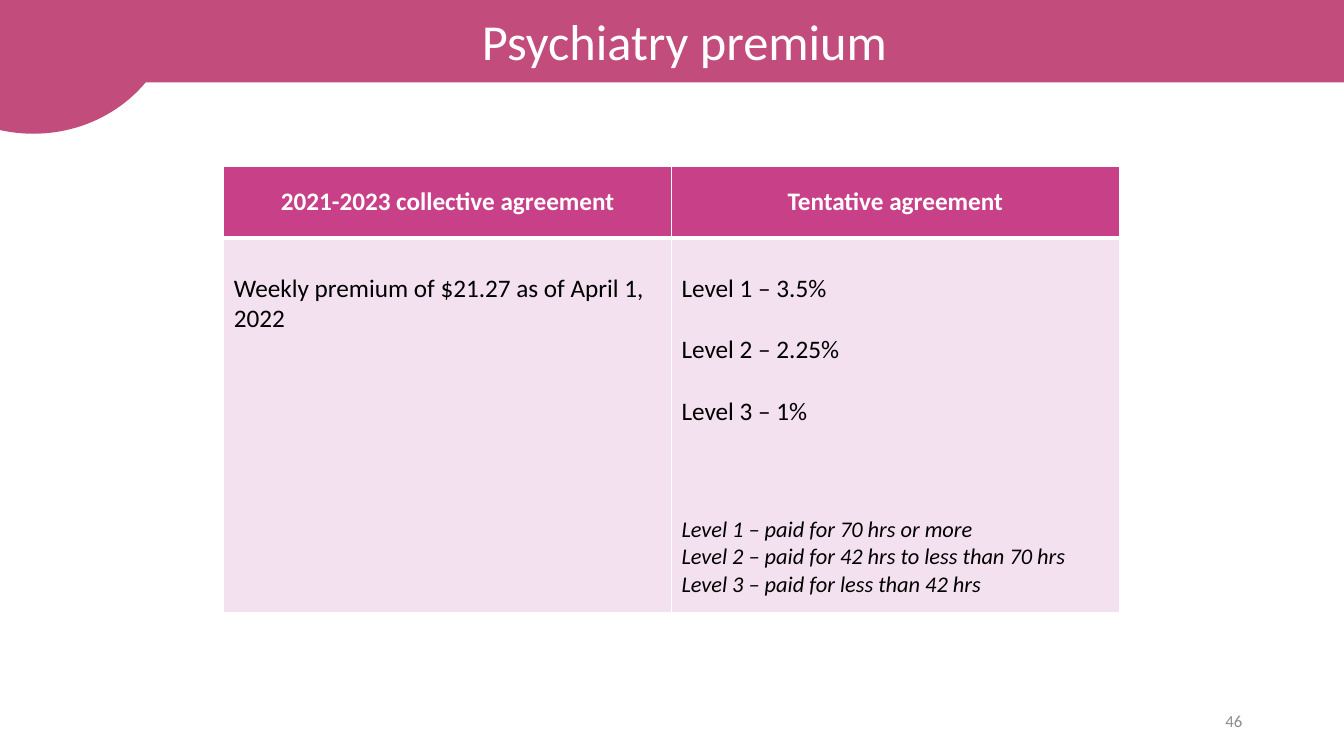
from dataclasses import dataclass

from lxml import etree
from pptx import Presentation
from pptx.dml.color import RGBColor
from pptx.enum.shapes import MSO_SHAPE
from pptx.enum.text import MSO_ANCHOR, PP_ALIGN
from pptx.oxml.ns import qn
from pptx.util import Inches, Pt

LEFT, CENTER, RIGHT = PP_ALIGN.LEFT, PP_ALIGN.CENTER, PP_ALIGN.RIGHT
TOP, MIDDLE = MSO_ANCHOR.TOP, MSO_ANCHOR.MIDDLE
ROUND_RECT, OVAL = MSO_SHAPE.ROUNDED_RECTANGLE, MSO_SHAPE.OVAL

FONT = "Calibri"
WHITE, BLACK, GREY = "FFFFFF", "000000", "8C8C8C"
BANNER, HEADER, BODY = "C24C7B", "C84087", "F3E1EF"


@dataclass
class Para:
    text: str
    size: float = 18
    color: str = BLACK
    align: PP_ALIGN = LEFT
    bold: bool = False
    italic: bool = False
    before: float = 0


@dataclass
class RowStyle:
    height: float
    fill: str
    anchor: MSO_ANCHOR
    margin_top: float
    top_line: float
    bottom_line: float


def rgb(color: str) -> RGBColor:
    return RGBColor.from_string(color)


def write(tf, paras: list[Para]) -> None:
    for i, para in enumerate(paras):
        p = tf.paragraphs[0] if i == 0 else tf.add_paragraph()
        p.alignment = para.align
        p.space_before = Pt(para.before)
        r = p.add_run()
        r.text = para.text
        r.font.name, r.font.size = FONT, Pt(para.size)
        r.font.bold, r.font.italic = para.bold, para.italic
        r.font.color.rgb = rgb(para.color)


def add_banner_shape(s, kind: MSO_SHAPE, *box: float):
    sp = s.shapes.add_shape(kind, *map(Inches, box))
    sp.shadow.inherit = False
    sp.fill.solid()
    sp.fill.fore_color.rgb = rgb(BANNER)
    sp.line.color.rgb = rgb(BANNER)
    sp.line.width = Pt(1)
    return sp


def add_borders(cell, top: float, bottom: float) -> None:
    """Draw white cell borders; call before the cell gets its fill."""
    tcPr = cell._tc.get_or_add_tcPr()
    for side, width in (("L", 1), ("R", 1), ("T", top), ("B", bottom)):
        ln = etree.SubElement(tcPr, qn(f"a:ln{side}"), w=str(Pt(width)))
        fill = etree.SubElement(ln, qn("a:solidFill"))
        etree.SubElement(fill, qn("a:srgbClr"), val=WHITE)


def add_premium_table(s, rows: list[tuple[RowStyle, list[list[Para]]]]) -> None:
    height = sum(style.height for style, _ in rows)
    table = s.shapes.add_table(len(rows), 2, Inches(2.22), Inches(1.65),
                               Inches(8.88), Inches(height)).table
    table.horz_banding = False
    for i, (style, contents) in enumerate(rows):
        table.rows[i].height = Inches(style.height)
        for j, paras in enumerate(contents):
            cell = table.cell(i, j)
            add_borders(cell, style.top_line, style.bottom_line)
            cell.fill.solid()
            cell.fill.fore_color.rgb = rgb(style.fill)
            cell.vertical_anchor = style.anchor
            cell.margin_top = Inches(style.margin_top)
            write(cell.text_frame, paras)


def main() -> None:
    prs = Presentation()
    prs.slide_width, prs.slide_height = Inches(13.33), Inches(7.5)
    s = prs.slides.add_slide(prs.slide_layouts[6])

    banner = add_banner_shape(s, ROUND_RECT, 0, 0, 13.58, 0.81)
    banner.text_frame.vertical_anchor = MIDDLE
    write(banner.text_frame, [Para("Psychiatry premium", 36, WHITE, CENTER)])
    add_banner_shape(s, OVAL, -1.08, -1.33, 2.82, 2.65)

    number = s.shapes.add_textbox(Inches(9.42), Inches(6.95), Inches(3), Inches(0.4))
    number.text_frame.word_wrap = True
    number.text_frame.vertical_anchor = MIDDLE
    write(number.text_frame, [Para("46", 12, GREY, RIGHT)])

    headings = ["2021-2023 collective agreement", "Tentative agreement"]
    old_premium = [Para("Weekly premium of $21.27 as of April 1, 2022")]
    rates = ["Level 1 – 3.5%", "Level 2 – 2.25%", "Level 3 – 1%"]
    hours = ["Level 1 – paid for 70 hrs or more",
             "Level 2 – paid for 42 hrs to less than 70 hrs",
             "Level 3 – paid for less than 42 hrs"]
    new_premium = [Para(rate, before=22 if i else 0) for i, rate in enumerate(rates)]
    new_premium += [Para(text, 16, italic=True, before=0 if i else 63.5)
                    for i, text in enumerate(hours)]

    add_premium_table(s, [
        (RowStyle(0.71, HEADER, MIDDLE, 0.05, 1, 3),
         [[Para(text, color=WHITE, align=CENTER, bold=True)] for text in headings]),
        (RowStyle(3.72, BODY, TOP, 0.35, 3, 1), [old_premium, new_premium]),
    ])
    prs.save("out.pptx")


if __name__ == "__main__":
    main()
